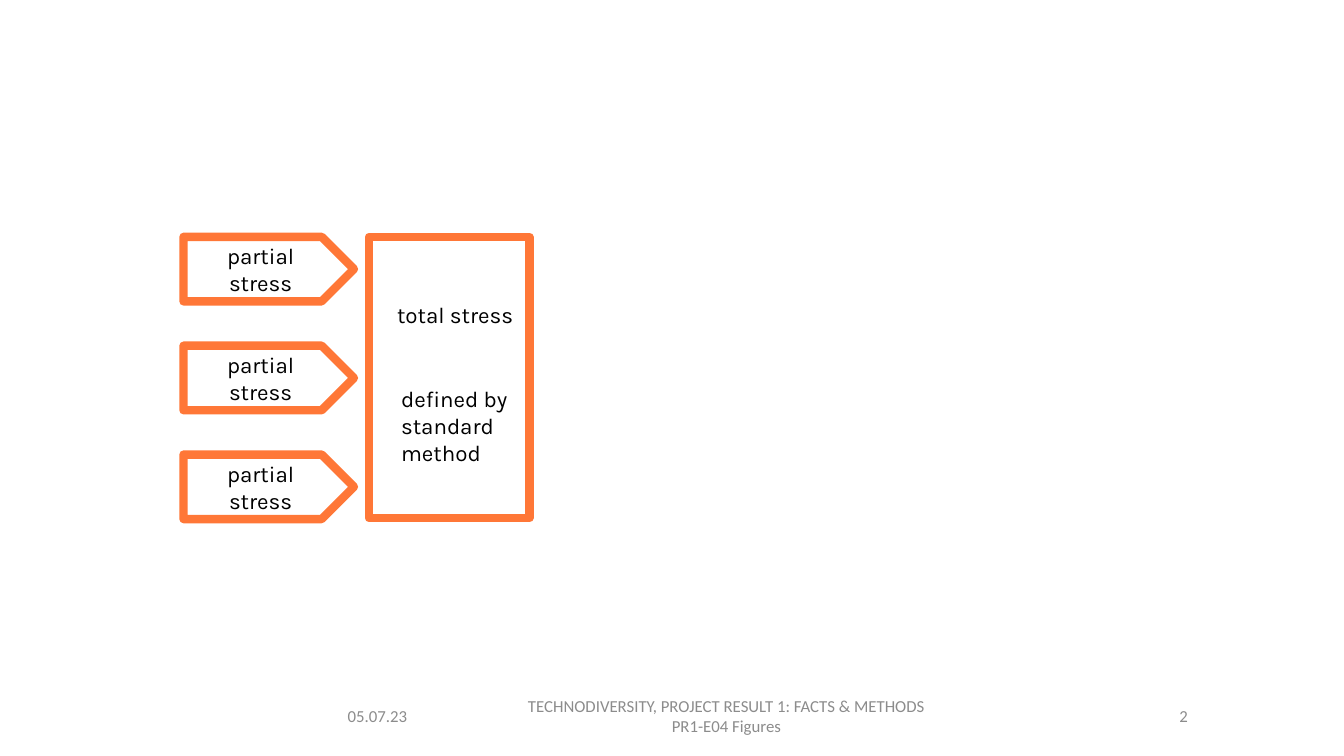
"""Build a slide showing how partial stresses add up to total stress."""
from lxml import etree
from pptx import Presentation
from pptx.dml.color import RGBColor
from pptx.enum.shapes import MSO_SHAPE as Preset
from pptx.enum.text import MSO_ANCHOR as Anchor, PP_ALIGN as Align
from pptx.oxml.ns import qn
from pptx.util import Inches, Pt

ORANGE = RGBColor(0xFF, 0x77, 0x37)
WHITE = RGBColor(0xFF, 0xFF, 0xFF)
BLACK = RGBColor(0x00, 0x00, 0x00)
GRAY = RGBColor(0x8C, 0x8C, 0x8C)

presentation = Presentation()
presentation.slide_width = Inches(13.33)
presentation.slide_height = Inches(7.5)
slide = presentation.slides.add_slide(presentation.slide_layouts[6])


def write_lines(shape, lines, font_name, size, color, align, anchor):
    frame = shape.text_frame
    frame.word_wrap = True
    frame.vertical_anchor = anchor
    for index, line in enumerate(lines):
        paragraph = frame.add_paragraph() if index else frame.paragraphs[0]
        paragraph.alignment = align
        run = paragraph.add_run()
        run.text = line
        run.font.name = font_name
        run.font.size = Pt(size)
        run.font.color.rgb = color


def add_outlined(preset, left, top, width, height):
    shape = slide.shapes.add_shape(
        preset, Inches(left), Inches(top), Inches(width), Inches(height))
    shape.shadow.inherit = False
    shape.fill.solid()
    shape.fill.fore_color.rgb = WHITE
    shape.line.color.rgb = ORANGE
    shape.line.width = Pt(6)
    etree.SubElement(shape.line._get_or_add_ln(), qn("a:round"))
    return shape


footers = [
    (3.35, 1.34, ["05.07.23"], Align.LEFT),
    (4.86, 4.69, ["TECHNODIVERSITY, PROJECT RESULT 1: FACTS & METHODS",
                  "PR1-E04 Figures"], Align.CENTER),
    (9.77, 2.11, ["2"], Align.RIGHT),
]
for left, width, lines, align in footers:
    footer = slide.shapes.add_textbox(
        Inches(left), Inches(6.9), Inches(width), Inches(0.4))
    write_lines(footer, lines, "Calibri", 12, GRAY, align, Anchor.MIDDLE)

add_outlined(Preset.RECTANGLE, 3.66, 2.35, 1.59, 2.79)

total_labels = [
    (3.84, 2.94, 0.36, "total stress"),
    (3.88, 3.77, 0.91, "defined by standard method"),
]
for left, top, height, text in total_labels:
    label = slide.shapes.add_textbox(
        Inches(left), Inches(top), Inches(1.42), Inches(height))
    write_lines(label, [text], "Karla", 16, BLACK, Align.LEFT, Anchor.TOP)

for row in range(3):
    partial = add_outlined(Preset.PENTAGON, 1.82, 2.35 + row * 1.08, 1.69, 0.64)
    write_lines(partial, ["partial", "stress"], "Karla", 16, BLACK,
                Align.CENTER, Anchor.MIDDLE)

presentation.save("out.pptx")
